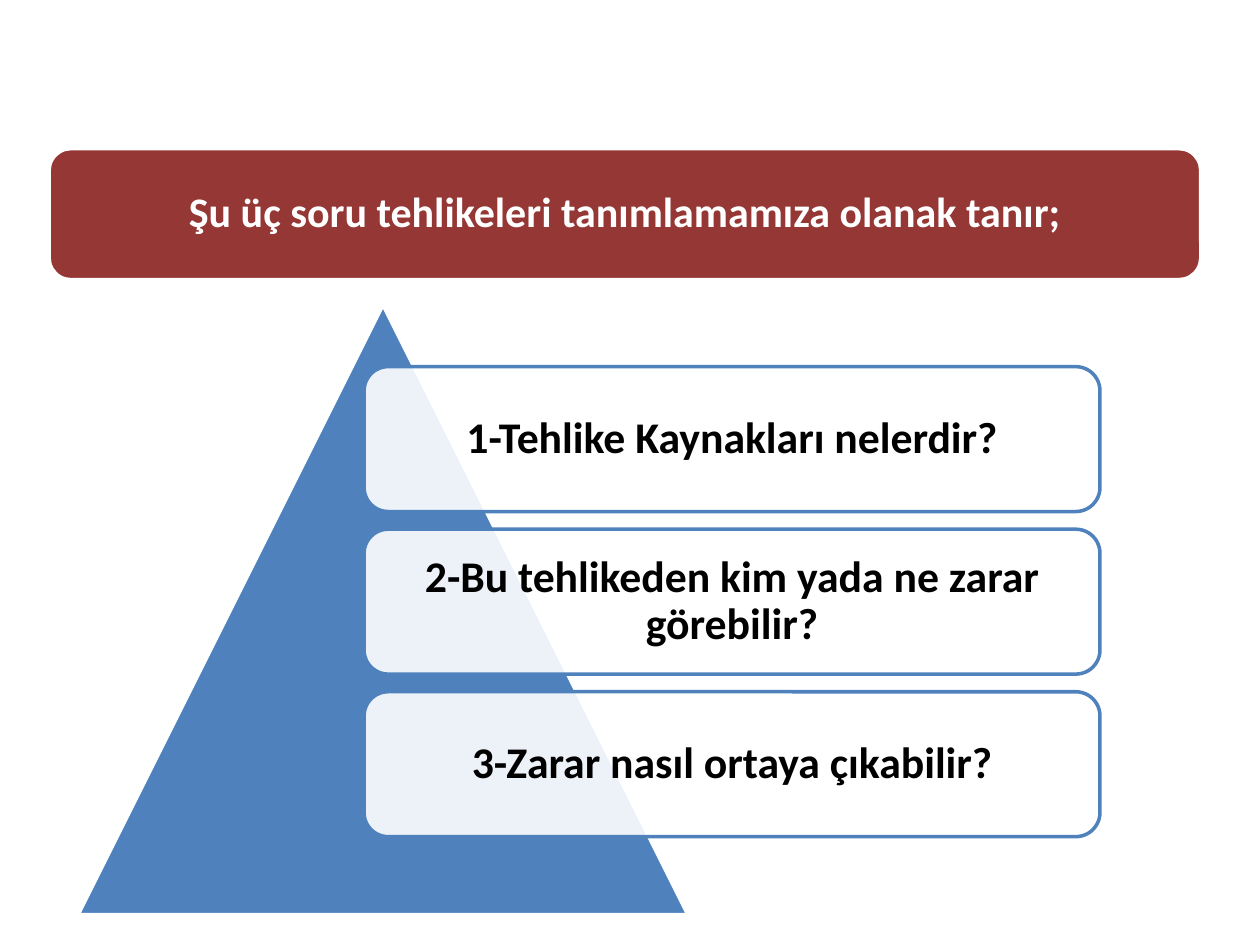
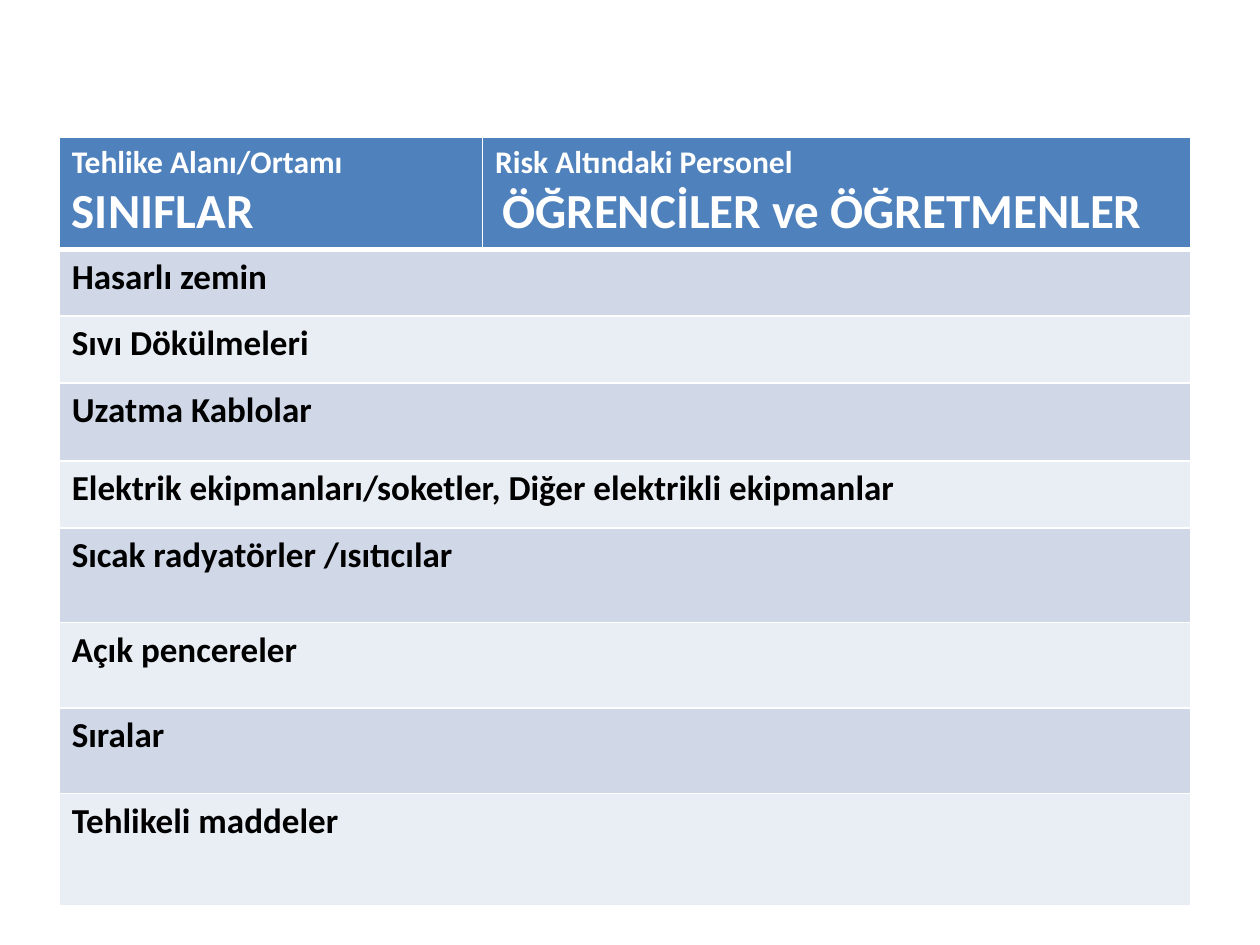
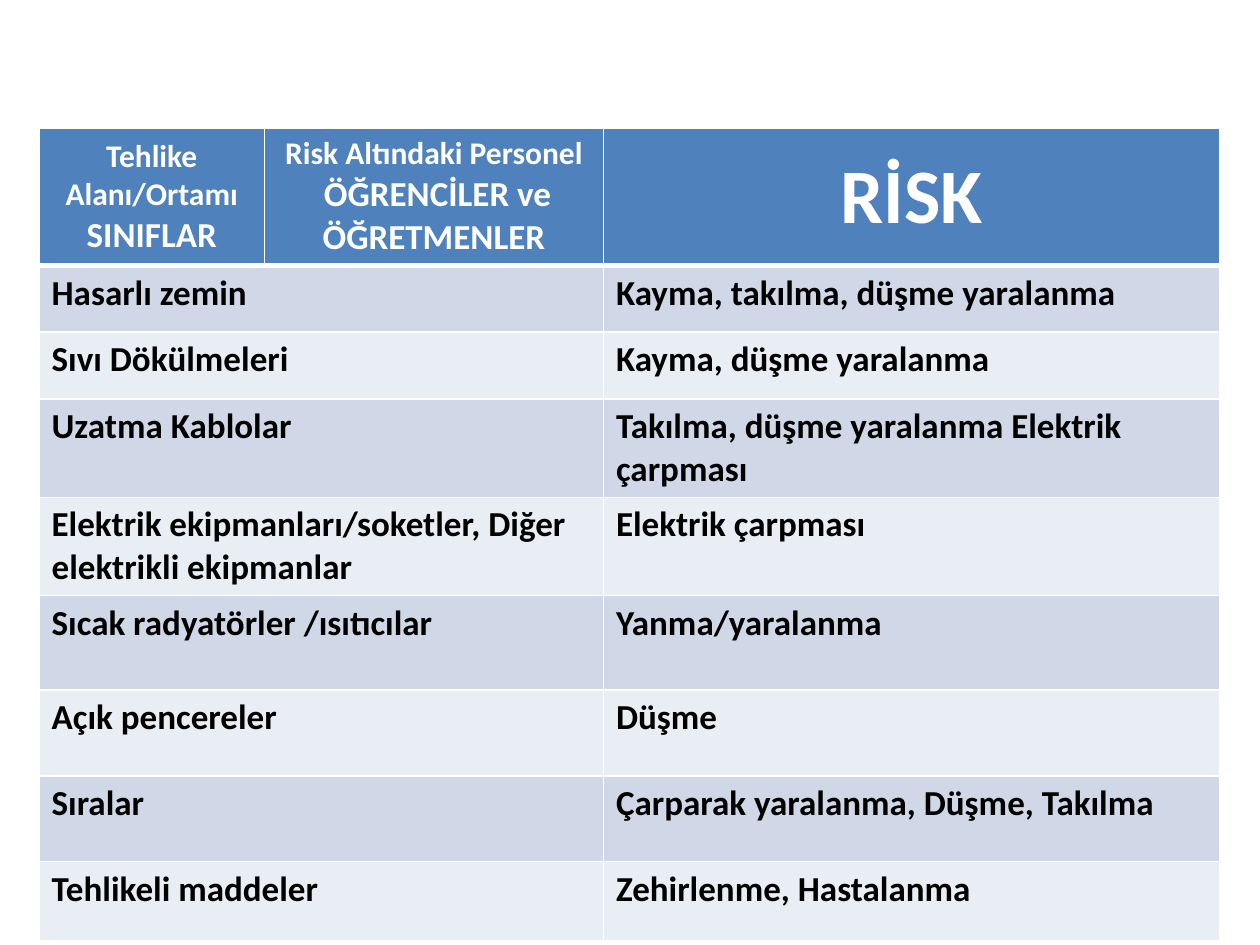
"""Builds three slides on classroom hazards, the people at risk and the risks."""
from lxml.etree import SubElement
from pptx import Presentation
from pptx.dml.color import RGBColor
from pptx.enum.shapes import MSO_SHAPE as Shape
from pptx.enum.text import MSO_ANCHOR as Anchor, PP_ALIGN as Align
from pptx.oxml.ns import qn
from pptx.util import Inches, Pt

HAZARD_RISKS = {
    "Hasarlı zemin": "Kayma, takılma, düşme yaralanma",
    "Sıvı Dökülmeleri": "Kayma, düşme yaralanma",
    "Uzatma Kablolar": "Takılma, düşme yaralanma Elektrik çarpması",
    "Elektrik ekipmanları/soketler, Diğer elektrikli ekipmanlar": "Elektrik çarpması",
    "Sıcak radyatörler /ısıtıcılar": "Yanma/yaralanma",
    "Açık pencereler": "Düşme",
    "Sıralar": "Çarparak yaralanma, Düşme, Takılma",
    "Tehlikeli maddeler": "Zehirlenme, Hastalanma",
}
QUESTIONS = [
    "1-Tehlike Kaynakları nelerdir?",
    "2-Bu tehlikeden kim yada ne zarar görebilir?",
    "3-Zarar nasıl ortaya çıkabilir?",
]
ROW_HEIGHTS = [0.89, 0.53, 0.53, 0.62, 0.53, 0.75, 0.68, 0.68]


def colour(hex_code):
    return RGBColor.from_string(hex_code)


class Deck:
    """Holds the shared style and the current slide."""

    FONT = "Calibri"
    BLUE, RED, WHITE, BLACK = "4F81BD", "953735", "FFFFFF", "000000"
    BANDS = ["D0D8E8", "E9EDF4"]

    def __init__(self):
        self.prs = Presentation()
        self.prs.slide_width, self.prs.slide_height = Inches(10), Inches(7.5)
        self.slide = None

    def new_slide(self):
        self.slide = self.prs.slides.add_slide(self.prs.slide_layouts[6])

    def add_lines(self, frame, lines, ink, align=Align.LEFT, spacing=None):
        for index, line in enumerate(lines):
            paragraph = frame.add_paragraph() if index else frame.paragraphs[0]
            paragraph.alignment = align
            paragraph.line_spacing = spacing
            for text, size in line:
                run = paragraph.add_run()
                run.text = text
                run.font.name, run.font.size, run.font.bold = self.FONT, Pt(size), True
                run.font.color.rgb = colour(ink)

    def shape(self, kind, box, fill, edge, opacity=100):
        shape = self.slide.shapes.add_shape(kind, *map(Inches, box))
        shape.shadow.inherit = False
        shape.fill.solid()
        shape.fill.fore_color.rgb = colour(fill)
        if opacity < 100:
            rgb = shape.element.spPr.find(qn("a:solidFill"))[0]
            SubElement(rgb, qn("a:alpha"), val=str(opacity * 1000))
        shape.line.color.rgb = colour(edge)
        shape.line.width = Pt(2)
        return shape

    def card(self, box, text, size, fill, edge, ink, opacity=100):
        frame = self.shape(Shape.ROUNDED_RECTANGLE, box, fill, edge, opacity).text_frame
        frame.word_wrap = True
        frame.vertical_anchor = Anchor.MIDDLE
        frame.margin_left = frame.margin_right = Inches(0.1)
        frame.margin_top = frame.margin_bottom = Inches(0.1)
        self.add_lines(frame, [[(text, size)]], ink, Align.CENTER, 0.9)

    def borders(self, cell, top, bottom):
        properties = cell._tc.get_or_add_tcPr()
        for side, width in zip("LRTB", (1, 1, top, bottom)):
            line = SubElement(properties, qn(f"a:ln{side}"), w=str(Pt(width)))
            SubElement(SubElement(line, qn("a:solidFill")), qn("a:srgbClr"), val=self.WHITE)

    def table(self, left, top, widths, heights, header, body, centred_header=False):
        """Adds a banded table whose body rows merge their first two columns."""
        box = map(Inches, (left, top, sum(widths), sum(heights)))
        table = self.slide.shapes.add_table(len(heights), len(widths), *box).table
        for column, width in zip(table.columns, widths):
            column.width = Inches(width)
        for index, (row, height) in enumerate(zip(table.rows, heights)):
            row.height = Inches(height)
            for cell in row.cells:
                self.borders(cell, 3 if index == 1 else 1, 1 if index else 3)
                cell.fill.solid()
                fill = self.BANDS[(index - 1) % 2] if index else self.BLUE
                cell.fill.fore_color.rgb = colour(fill)
        for cell, lines in zip(table.rows[0].cells, header):
            if centred_header:
                cell.vertical_anchor = Anchor.MIDDLE
            align = Align.CENTER if centred_header else Align.LEFT
            self.add_lines(cell.text_frame, lines, self.WHITE, align)
        for index, texts in enumerate(body, 1):
            table.cell(index, 0).merge(table.cell(index, 1))
            cells = [cell for cell in table.rows[index].cells if not cell.is_spanned]
            for cell, text in zip(cells, texts):
                self.add_lines(cell.text_frame, [[(text, 20)]], self.BLACK)


def place_and_people(size):
    return [
        [[("Tehlike Alanı/Ortamı", 18)], [("SINIFLAR", size)]],
        [[("Risk Altındaki Personel", 18)],
         [(" ", 18), ("ÖĞRENCİLER ve ÖĞRETMENLER", size)]],
    ]


def questions_slide(deck):
    deck.new_slide()
    deck.shape(Shape.ISOSCELES_TRIANGLE, (0.62, 2.42, 4.84, 4.84), deck.BLUE, deck.WHITE)
    for index, question in enumerate(QUESTIONS):
        box = (2.89, 2.91 + 1.29 * index, 5.84, 1.15)
        deck.card(box, question, 25, deck.WHITE, deck.BLUE, deck.BLACK, opacity=90)
    deck.card((0.39, 1.18, 9.14, 1.04), "Şu üç soru tehlikeleri tanımlamamıza olanak tanır;",
              24, deck.RED, deck.WHITE, deck.WHITE)


def hazards_slide(deck):
    deck.new_slide()
    deck.table(0.47, 1.09, [3.36, 5.62], ROW_HEIGHTS + [0.89],
               place_and_people(28), [[hazard] for hazard in HAZARD_RISKS])


def risks_slide(deck):
    deck.new_slide()
    deck.table(0.31, 1.02, [1.79, 2.69, 4.89], ROW_HEIGHTS + [0.63],
               place_and_people(20) + [[[("RİSK", 44)]]],
               HAZARD_RISKS.items(), centred_header=True)


def main():
    deck = Deck()
    questions_slide(deck)
    hazards_slide(deck)
    risks_slide(deck)
    deck.prs.save("out.pptx")


if __name__ == "__main__":
    main()
